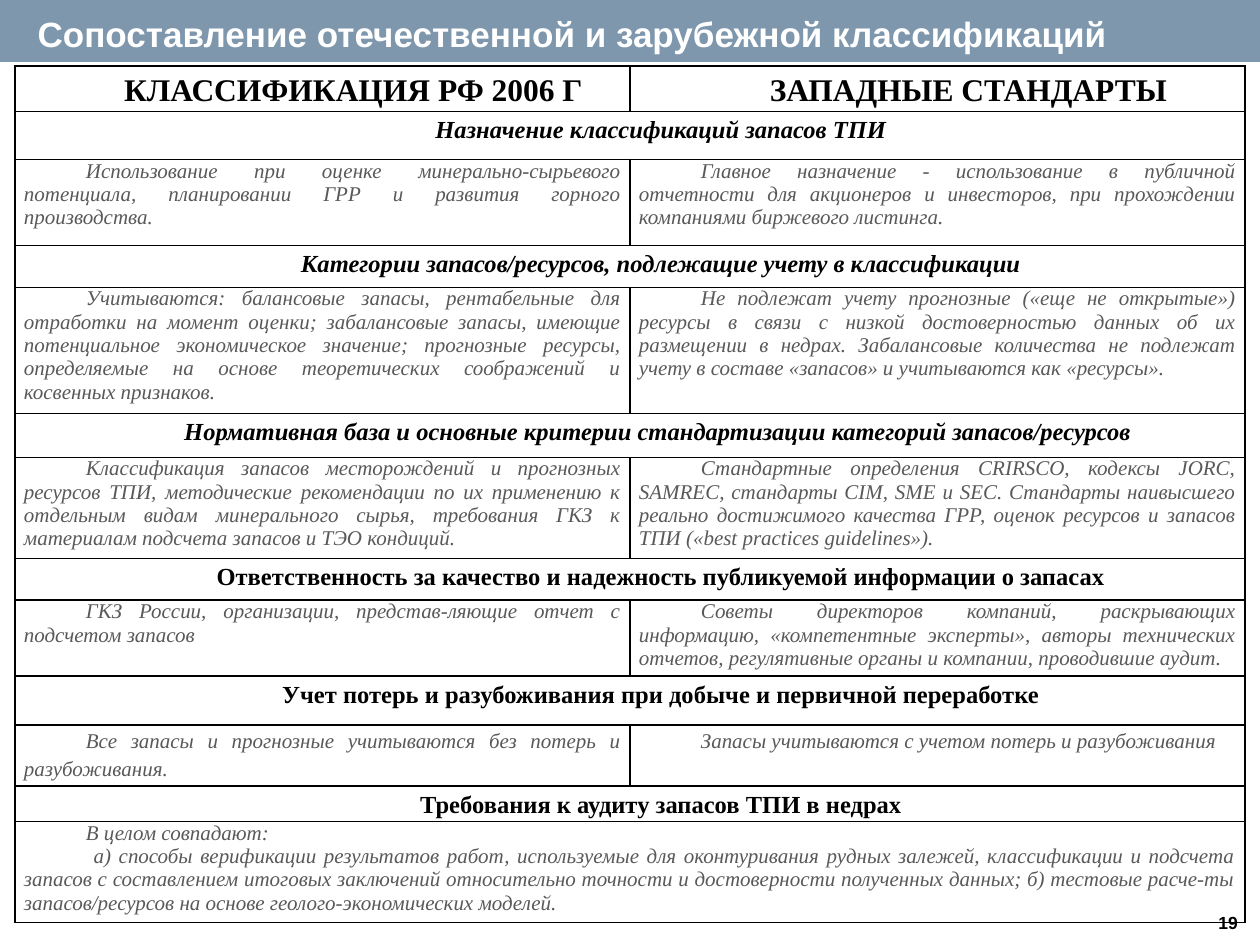
from lxml.etree import SubElement
from pptx import Presentation
from pptx.dml.color import RGBColor
from pptx.enum.shapes import MSO_SHAPE
from pptx.enum.text import MSO_ANCHOR, PP_ALIGN
from pptx.oxml.ns import qn
from pptx.util import Emu, Pt

COLORS = {"band": "7E97AD", "white": "FFFFFF", "black": "000000", "body": "595959"}
SANS, SERIF = "Arial", "Times New Roman"
INDENT = 62

FORMATS = {
    "title": {"name": SANS, "size": Pt(20), "bold": True, "color": "white"},
    "number": {"name": SANS, "size": Pt(10), "bold": True, "color": "black"},
    "head": {"name": SERIF, "size": Pt(18), "bold": True, "color": "black"},
    "topic": {"name": SERIF, "size": Pt(14), "bold": True, "italic": True, "color": "black"},
    "upright": {"name": SERIF, "size": Pt(14), "bold": True, "color": "black"},
    "body": {"name": SERIF, "size": Pt(12), "italic": True, "color": "body"},
}
CENTERED = {"alignment": PP_ALIGN.CENTER, "line_spacing": 1.2}
JUSTIFIED = {"alignment": PP_ALIGN.JUSTIFY, "line_spacing": 1.0}
LOOSE = {"alignment": PP_ALIGN.JUSTIFY, "line_spacing": 1.2}

COMPARISON = [
    (45, "head", CENTERED, ["КЛАССИФИКАЦИЯ РФ 2006 Г", "ЗАПАДНЫЕ СТАНДАРТЫ"]),
    (48, "topic", CENTERED, ["Назначение классификаций запасов ТПИ"]),
    (86, "body", JUSTIFIED, [
        "Использование при оценке минерально-сырьевого потенциала, планировании ГРР "
        "и развития горного производства.",
        "Главное назначение - использование в публичной отчетности для акционеров и "
        "инвесторов, при прохождении компаниями биржевого листинга.",
    ]),
    (42, "topic", CENTERED, ["Категории запасов/ресурсов, подлежащие учету в классификации"]),
    (126, "body", JUSTIFIED, [
        "Учитываются: балансовые запасы, рентабельные для отработки на момент оценки; "
        "забалансовые запасы, имеющие потенциальное экономическое значение; прогнозные "
        "ресурсы, определяемые на основе теоретических соображений и косвенных признаков.",
        "Не подлежат учету прогнозные («еще не открытые») ресурсы в связи с низкой "
        "достоверностью данных об их размещении в недрах. Забалансовые количества не "
        "подлежат учету в составе «запасов» и учитываются как «ресурсы».",
    ]),
    (44, "topic", CENTERED, [
        "Нормативная база и основные критерии стандартизации категорий запасов/ресурсов ",
    ]),
    (101, "body", JUSTIFIED, [
        "Классификация запасов месторождений и прогнозных ресурсов ТПИ, методические "
        "рекомендации по их применению к отдельным видам минерального сырья, требования "
        "ГКЗ к материалам подсчета запасов и ТЭО кондиций.",
        "Стандартные определения CRIRSCO, кодексы JORC, SAMREC, стандарты СIM, SME и SEC. "
        "Стандарты наивысшего реально достижимого качества ГРР, оценок ресурсов и запасов "
        "ТПИ («best practices guidelines»).",
    ]),
    (42, "upright", CENTERED, [
        "Ответственность за качество и надежность публикуемой информации о запасах",
    ]),
    (76, "body", JUSTIFIED, [
        "ГКЗ России, организации, представ-ляющие отчет с подсчетом запасов",
        "Советы директоров компаний, раскрывающих информацию, «компетентные эксперты», "
        "авторы технических отчетов, регулятивные органы и компании, проводившие аудит.",
    ]),
    (49, "upright", CENTERED, ["Учет потерь и разубоживания при добыче и первичной переработке"]),
    (61, "body", LOOSE, [
        "Все запасы и прогнозные учитываются без потерь и разубоживания.",
        "Запасы учитываются с учетом потерь и разубоживания",
    ]),
    (35, "upright", CENTERED, ["Требования к аудиту запасов ТПИ в недрах"]),
    (101, "body", JUSTIFIED, [
        "В целом совпадают:\n"
        " а) способы верификации результатов работ, используемые для оконтуривания рудных "
        "залежей, классификации и подсчета запасов с составлением итоговых заключений "
        "относительно точности и достоверности полученных данных; б) тестовые расче-ты "
        "запасов/ресурсов на основе геолого-экономических моделей.",
    ]),
]


def px(length):
    return Emu(round(length * 914400 / 126))


def rgb(color):
    return RGBColor.from_string(COLORS[color])


def set_values(target, values):
    for key, value in values.items():
        setattr(target, key, value)


class SlideBuilder:
    def __init__(self, slide):
        self.slide = slide

    def put_text(self, frame, text, style, layout, indent=0):
        frame.text = text
        for paragraph in frame.paragraphs:
            set_values(paragraph, layout)
            if indent:
                properties = paragraph._p.get_or_add_pPr()
                properties.set("marL", "0")
                properties.set("indent", str(px(indent)))
            for run in paragraph.runs:
                values = dict(FORMATS[style])
                run.font.color.rgb = rgb(values.pop("color"))
                set_values(run.font, values)

    def band(self, x, y, width, height):
        header = self.slide.shapes.add_shape(MSO_SHAPE.RECTANGLE, *map(px, (x, y, width, height)))
        header.shadow.inherit = False
        header.fill.solid()
        header.fill.fore_color.rgb = rgb("band")
        header.line.fill.background()

    def label(self, x, y, width, height, text, style, align, anchor):
        frame = self.slide.shapes.add_textbox(*map(px, (x, y, width, height))).text_frame
        set_values(frame, {"word_wrap": True, "vertical_anchor": anchor})
        self.put_text(frame, text, style, {"alignment": align})

    def cell(self, cell):
        set_values(cell, {"margin_left": px(9), "margin_right": px(9),
                          "margin_top": 0, "margin_bottom": 0})
        properties = cell._tc.get_or_add_tcPr()
        for side in ("lnL", "lnR", "lnT", "lnB"):
            border = SubElement(properties, qn(f"a:{side}"), w=str(Pt(1)))
            fill = SubElement(border, qn("a:solidFill"))
            SubElement(fill, qn("a:srgbClr"), val=COLORS["black"])
        cell.fill.background()

    def table(self, x, y, width, rows):
        height = sum(row[0] for row in rows)
        table = self.slide.shapes.add_table(
            len(rows), 2, *map(px, (x, y, width, height))).table
        set_values(table, {"first_row": False, "horz_banding": False})
        for column in table.columns:
            column.width = px(width / 2)
        for index, (row_height, style, layout, texts) in enumerate(rows):
            table.rows[index].height = px(row_height)
            for column in range(2):
                self.cell(table.cell(index, column))
            if len(texts) == 1:
                table.cell(index, 0).merge(table.cell(index, 1))
            for column, text in enumerate(texts):
                self.put_text(table.cell(index, column).text_frame, text, style, layout, INDENT)


def main():
    deck = Presentation()
    set_values(deck, {"slide_width": px(1260), "slide_height": px(945)})
    builder = SlideBuilder(deck.slides.add_slide(deck.slide_layouts[6]))
    builder.band(0, 0, 1260, 62)
    builder.label(1206, 900, 53, 45, "19", "number", PP_ALIGN.LEFT, MSO_ANCHOR.MIDDLE)
    builder.label(0, 6, 1145, 55, "Сопоставление отечественной и зарубежной классификаций",
                  "title", PP_ALIGN.CENTER, MSO_ANCHOR.TOP)
    builder.table(15, 66, 1230, COMPARISON)
    deck.save("out.pptx")


if __name__ == "__main__":
    main()
